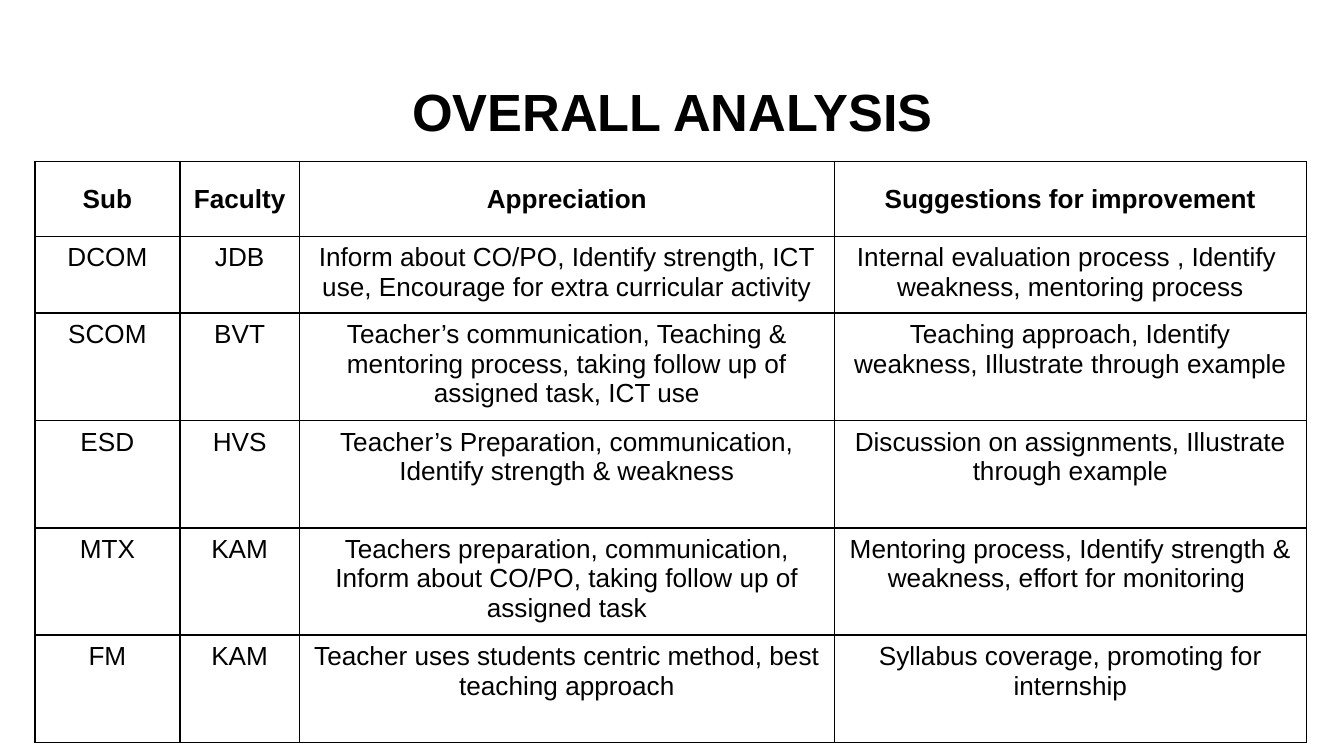
"""Builds the overall analysis slide with its feedback table."""
from lxml.etree import SubElement
from pptx import Presentation
from pptx.dml.color import RGBColor
from pptx.enum.text import MSO_ANCHOR, PP_ALIGN
from pptx.oxml import parse_xml
from pptx.oxml.ns import nsdecls, qn
from pptx.util import Cm, Pt

BLACK = RGBColor(0, 0, 0)
WHITE = RGBColor(255, 255, 255)

COLUMN_WIDTHS = [2.74, 2.26, 10.11, 8.92]
ROW_HEIGHTS = [1.42, 1.45] + [2.03] * 4
FEEDBACK = [
    ("Sub", "Faculty", "Appreciation", "Suggestions for improvement"),
    ("DCOM", "JDB",
     "Inform about CO/PO, Identify strength, ICT use, Encourage for extra curricular activity",
     "Internal evaluation process , Identify  weakness, mentoring process"),
    ("SCOM", "BVT",
     "Teacher’s communication, Teaching & mentoring process, taking follow up of assigned task, ICT use",
     " Teaching approach, Identify  weakness, Illustrate through example"),
    ("ESD", "HVS",
     "Teacher’s Preparation, communication, Identify strength & weakness",
     "Discussion on assignments, Illustrate through example"),
    ("MTX", "KAM",
     "Teachers preparation, communication, Inform about CO/PO, taking follow up of assigned task",
     "Mentoring process, Identify strength & weakness, effort for monitoring "),
    ("FM", "KAM",
     "Teacher uses students centric method, best teaching approach",
     "Syllabus coverage, promoting for internship"),
]


def write_text(frame, text, size=14, bold=False, color=BLACK, font="Arial",
               align=PP_ALIGN.CENTER):
    paragraph = frame.paragraphs[0]
    paragraph.alignment = align
    run = paragraph.add_run()
    run.text = text
    run.font.name = font
    run.font.size = Pt(size)
    run.font.bold = bold
    run.font.color.rgb = color


class SlideBuilder:
    def __init__(self, slide, ink=BLACK, paper=WHITE, border=1):
        self.slide = slide
        self.ink = ink
        self.paper = paper
        self.border = border
        slide.background.fill.solid()
        slide.background.fill.fore_color.rgb = paper

    def title(self, text, left, top, width, height):
        heading = self.slide.shapes.title
        heading.left, heading.top = Cm(left), Cm(top)
        heading.width, heading.height = Cm(width), Cm(height)
        frame = heading.text_frame
        frame.word_wrap = True
        frame.vertical_anchor = MSO_ANCHOR.TOP
        frame.margin_left = frame.margin_right = Cm(0.25)
        frame.margin_top = frame.margin_bottom = Cm(0.25)
        write_text(frame, text, size=28, bold=True, color=self.ink)

    def table(self, rows, left, top, widths, heights):
        grid = self.slide.shapes.add_table(
            len(rows), len(widths), Cm(left), Cm(top),
            Cm(sum(widths)), Cm(sum(heights))).table
        grid.first_row = grid.horz_banding = False
        for column, width in zip(grid.columns, widths):
            column.width = Cm(width)
        for row, height in zip(grid.rows, heights):
            row.height = Cm(height)
        for r, texts in enumerate(rows):
            for c, text in enumerate(texts):
                self.cell(grid.cell(r, c), text, header=r == 0)

    def cell(self, cell, text, header):
        cell.fill.solid()
        cell.fill.fore_color.rgb = self.paper
        cell.vertical_anchor = MSO_ANCHOR.MIDDLE if header else MSO_ANCHOR.TOP
        write_text(cell.text_frame, text, bold=header, color=self.ink)
        properties = cell._tc.get_or_add_tcPr()
        for position, side in enumerate("LRTB"):
            edge = parse_xml(f'<a:ln{side} {nsdecls("a")} w="{Pt(self.border)}"/>')
            fill = SubElement(edge, qn("a:solidFill"))
            SubElement(fill, qn("a:srgbClr"), val=str(self.ink))
            properties.insert(position, edge)


def main():
    deck = Presentation()
    deck.slide_width, deck.slide_height = Cm(25.4), Cm(14.29)
    builder = SlideBuilder(deck.slides.add_slide(deck.slide_layouts[5]))
    builder.title("OVERALL ANALYSIS", 0.87, 1.25, 23.67, 1.6)
    builder.table(FEEDBACK, 0.66, 3.05, COLUMN_WIDTHS, ROW_HEIGHTS)
    deck.save("out.pptx")


if __name__ == "__main__":
    main()
